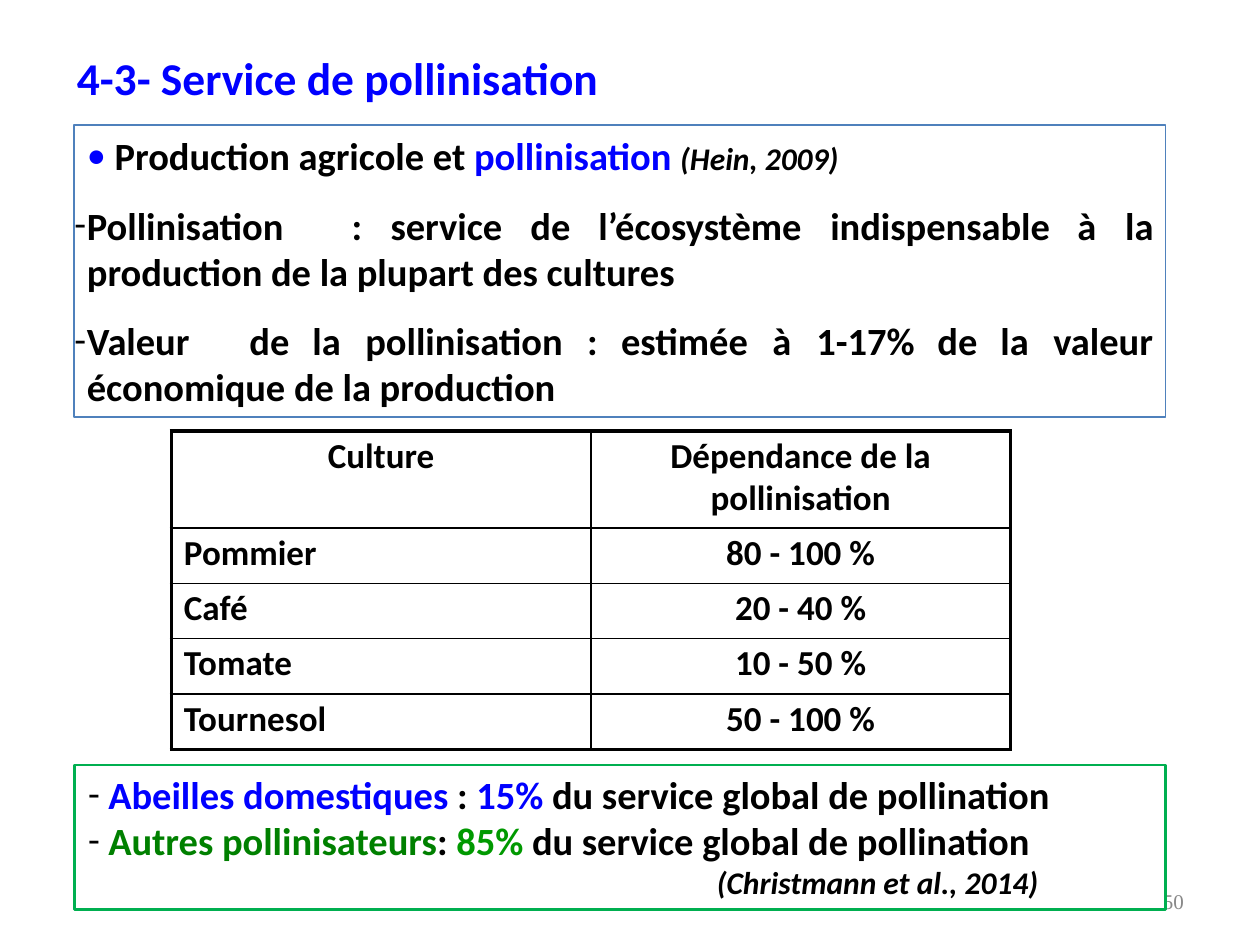
"""Builds the slide on the pollination service."""
from dataclasses import dataclass
from typing import Optional

from lxml.etree import SubElement
from pptx import Presentation
from pptx.dml.color import RGBColor
from pptx.enum.shapes import MSO_SHAPE
from pptx.enum.text import MSO_ANCHOR, PP_ALIGN
from pptx.oxml.ns import qn
from pptx.util import Inches, Pt


@dataclass(frozen=True)
class Theme:
    font: str = "Calibri"
    number_font: str = "Times New Roman"
    black: str = "000000"
    blue: str = "0000FF"
    green: str = "008000"
    bright_green: str = "009900"
    gray: str = "888888"
    frame_blue: str = "4F81BC"
    frame_green: str = "00AF50"
    title: float = 26
    body: float = 22
    cell: float = 20
    cite: float = 18
    number: float = 12
    thin: float = 1
    thick: float = 2.25


T = Theme()


@dataclass(frozen=True)
class Span:
    text: str
    color: str = T.black
    size: float = T.body
    bold: bool = True
    italic: bool = False
    font: str = T.font


@dataclass(frozen=True)
class Para:
    spans: tuple[Span, ...]
    before: float = 0
    margin: float = 0
    indent: float = 0
    bullet: Optional[str] = None
    bullet_color: str = T.black
    tabs: tuple[float, ...] = ()
    align: PP_ALIGN = PP_ALIGN.LEFT


@dataclass(frozen=True)
class Box:
    left: float
    top: float
    width: float
    height: float


def add_color(parent, color: str) -> None:
    SubElement(parent, qn("a:srgbClr"), val=color)


def fill_paragraph(p, para: Para) -> None:
    pPr = p._p.get_or_add_pPr()
    pPr.set("marL", str(Inches(para.margin)))
    pPr.set("indent", str(Inches(para.indent)))
    if para.bullet:
        add_color(SubElement(pPr, qn("a:buClr")), para.bullet_color)
        SubElement(pPr, qn("a:buFont"), typeface=T.font)
        SubElement(pPr, qn("a:buChar"), char=para.bullet)
    if para.tabs:
        tabs = SubElement(pPr, qn("a:tabLst"))
        for pos in para.tabs:
            SubElement(tabs, qn("a:tab"), pos=str(Inches(pos)), algn="l")
    p.alignment = para.align
    p.space_before = Pt(para.before)
    for span in para.spans:
        r = p.add_run()
        r.text = span.text
        r.font.name = span.font
        r.font.size = Pt(span.size)
        r.font.bold = span.bold
        r.font.italic = span.italic
        r.font.color.rgb = RGBColor.from_string(span.color)


def fill_frame(tf, paras: tuple[Para, ...], top: float) -> None:
    tf.word_wrap = True
    tf.vertical_anchor = MSO_ANCHOR.TOP
    tf.margin_left = tf.margin_right = tf.margin_bottom = 0
    tf.margin_top = Inches(top)
    for i, para in enumerate(paras):
        fill_paragraph(tf.add_paragraph() if i else tf.paragraphs[0], para)


def place(box: Box) -> tuple:
    return tuple(Inches(v) for v in (box.left, box.top, box.width, box.height))


def add_text(s, box: Box, paras: tuple[Para, ...]) -> None:
    fill_frame(s.shapes.add_textbox(*place(box)).text_frame, paras, 0.02)


def add_frame(s, box: Box, color: str, width: float):
    sp = s.shapes.add_shape(MSO_SHAPE.RECTANGLE, *place(box))
    sp.shadow.inherit = False
    sp.fill.background()
    sp.line.color.rgb = RGBColor.from_string(color)
    sp.line.width = Pt(width)
    return sp


def set_borders(cell, widths: dict[str, float]) -> None:
    tcPr = cell._tc.get_or_add_tcPr()
    for i, (side, width) in enumerate(widths.items()):
        ln = tcPr.makeelement(qn(f"a:ln{side}"), {"w": str(Pt(width))})
        add_color(SubElement(ln, qn("a:solidFill")), T.black)
        tcPr.insert(i, ln)


def add_crops(s, box: Box, rows: tuple[tuple[str, str], ...], head: float, row: float) -> None:
    last = len(rows) - 1
    tbl = s.shapes.add_table(len(rows), 2, *place(box)).table
    for i, texts in enumerate(rows):
        tbl.rows[i].height = Inches(row if i else head)
        for j, text in enumerate(texts):
            cell = tbl.cell(i, j)
            cell.fill.background()
            cell.margin_left = cell.margin_right = cell.margin_bottom = 0
            cell.margin_top = Inches(0.03)
            label = i > 0 and j == 0
            for k, line in enumerate(text.split("\n")):
                tf = cell.text_frame
                p = tf.add_paragraph() if k else tf.paragraphs[0]
                fill_paragraph(p, Para(
                    (Span(line, size=T.cell),), before=0 if k else 2.4,
                    margin=0.1 if label else 0,
                    align=PP_ALIGN.LEFT if label else PP_ALIGN.CENTER))
            set_borders(cell, {
                "L": T.thin if j else T.thick, "R": T.thick if j else T.thin,
                "T": T.thin if i else T.thick, "B": T.thick if i == last else T.thin})


def dash(text: str, tabs: tuple[float, ...]) -> Para:
    return Para((Span(text),), 13.2, 0.1, -0.1, "-", tabs=tabs)


def share(name: str, sep: str, percent: str, name_color: str, percent_color: str) -> Para:
    return Para((Span(name, name_color), Span(sep), Span(percent, percent_color),
                 Span(" du service global de pollination")), 0, 0.18, -0.16, "-")


def main() -> None:
    prs = Presentation()
    prs.slide_width, prs.slide_height = Inches(10), Inches(7.5)
    s = prs.slides.add_slide(prs.slide_layouts[6])
    add_text(s, Box(0.6, 0.38, 5, 0.46), (
        Para((Span("4-3- Service de pollinisation", T.blue, T.title),), margin=0.01),))
    frame = add_frame(s, Box(0.59, 0.99, 8.66, 2.32), T.frame_blue, 1)
    fill_frame(frame.text_frame, (
        Para((Span("Production agricole et "), Span("pollinisation ", T.blue),
              Span("(Hein, 2009)", size=T.cite, italic=True)),
             0, 0.32, -0.22, "•", T.blue),
        dash("Pollinisation\t:\tservice\tde\tl’écosystème\tindispensable\tà\tla "
             "production de la plupart des cultures",
             (2.2, 2.51, 3.62, 4.16, 6, 7.96, 8.34)),
        dash("Valeur\tde\tla\tpollinisation\t:\testimée\tà\t1-17%\tde\tla\tvaleur "
             "économique de la production",
             (1.39, 1.89, 2.31, 4.07, 4.34, 5.54, 5.89, 6.85, 7.35, 7.77)),
    ), 0.06)
    add_crops(s, Box(1.36, 3.42, 6.66, 2.53), (
        ("Culture", "Dépendance de la\npollinisation"),
        ("Pommier", "80 - 100 %"),
        ("Café", "20 - 40 %"),
        ("Tomate", "10 - 50 %"),
        ("Tournesol", "50 - 100 %")), 0.77, 0.44)
    add_text(s, Box(9.22, 7.03, 0.19, 0.23), (
        Para((Span("50", T.gray, T.number, False, font=T.number_font),), margin=0.01),))
    add_frame(s, Box(0.59, 6.07, 8.66, 1.15), T.frame_green, 1.5)
    add_text(s, Box(0.68, 6.1, 7.67, 1.06), (
        share("Abeilles domestiques", " : ", "15%", T.blue, T.blue),
        share("Autres pollinisateurs", ": ", "85%", T.green, T.bright_green),
        Para((Span("(Christmann et al., 2014)", size=T.cite, italic=True),), margin=5.01)))
    prs.save("out.pptx")


if __name__ == "__main__":
    main()
